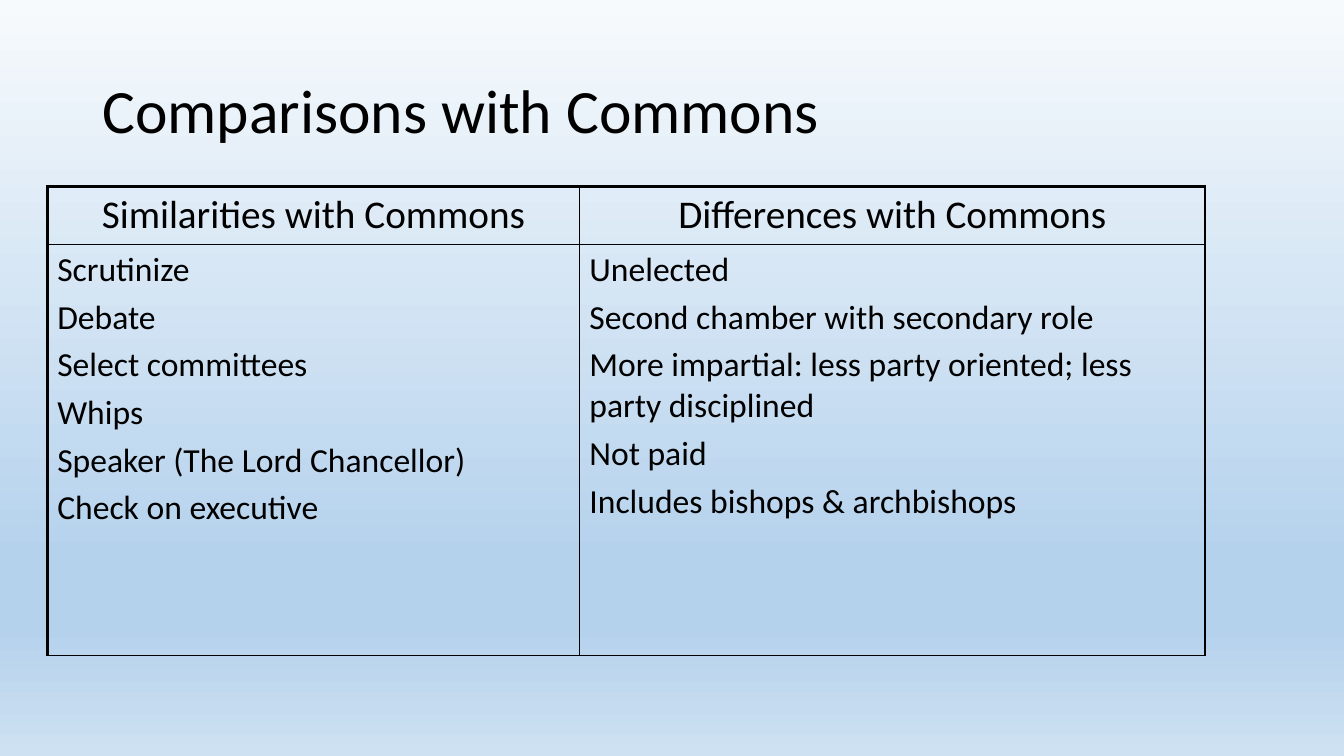
from dataclasses import dataclass

import pptx
import pptx.dml.color
import pptx.enum.text
import pptx.oxml
import pptx.oxml.ns
import pptx.slide
import pptx.table
import pptx.text.text
import pptx.util
from lxml import etree
from pptx.util import Cm

FONT = "Calibri"
INK = "000000"
THICK, THIN = 2.25, 1
ALIGN = pptx.enum.text.PP_ALIGN
STOPS = [(0, "F7FAFD"), (74, "B5D2EC"), (83, "B5D2EC"), (100, "CEE1F2")]


@dataclass
class Column:
    head: str
    width: float
    points: list[str]


COLUMNS = [
    Column("Similarities with Commons", 13.41, [
        "Scrutinize",
        "Debate",
        "Select committees",
        "Whips",
        "Speaker (The Lord Chancellor)",
        "Check on executive",
    ]),
    Column("Differences with Commons", 15.77, [
        "Unelected",
        "Second chamber with secondary role",
        "More impartial: less party oriented; less party disciplined",
        "Not paid",
        "Includes bishops & archbishops",
    ]),
]
HEIGHTS = [1.46, 10.36]


def color(code: str) -> pptx.dml.color.RGBColor:
    return pptx.dml.color.RGBColor.from_string(code)


def style(line: pptx.text.text._Paragraph, size: float, align: ALIGN) -> None:
    line.alignment = align
    for run in line.runs:
        run.font.name = FONT
        run.font.size = pptx.util.Pt(size)
        run.font.color.rgb = color(INK)


def paint(slide: pptx.slide.Slide) -> None:
    fill = slide.background.fill
    fill.gradient()
    fill.gradient_angle = 270
    stops = slide.element.find(".//" + pptx.oxml.ns.qn("a:gsLst"))
    for stop in list(stops):
        stops.remove(stop)
    for place, code in STOPS:
        stop = etree.SubElement(stops, pptx.oxml.ns.qn("a:gs"), pos=str(place * 1000))
        etree.SubElement(stop, pptx.oxml.ns.qn("a:srgbClr"), val=code)


def border(cell: pptx.table._Cell, side: str, width: float) -> None:
    props = cell._tc.get_or_add_tcPr()
    props.append(pptx.oxml.parse_xml(
        f'<a:ln{side} {pptx.oxml.ns.nsdecls("a")} w="{pptx.util.Pt(width)}">'
        f'<a:solidFill><a:srgbClr val="{INK}"/></a:solidFill></a:ln{side}>'
    ))


def write(cell: pptx.table._Cell, lines: list[str], size: float, align: ALIGN) -> None:
    cell.text_frame.text = "\n".join(lines)
    for index, line in enumerate(cell.text_frame.paragraphs):
        style(line, size, align)
        if index:
            line.space_before = pptx.util.Pt(size * 0.2)


def main() -> None:
    deck = pptx.Presentation()
    deck.slide_width, deck.slide_height = Cm(33.87), Cm(19.05)
    slide = deck.slides.add_slide(deck.slide_layouts[5])
    paint(slide)

    # Title
    title = slide.shapes.title
    title.left, title.top = Cm(2.33), Cm(1.01)
    title.width, title.height = Cm(29.21), Cm(3.68)
    frame = title.text_frame
    frame.text = "Comparisons with Commons"
    frame.auto_size = pptx.enum.text.MSO_AUTO_SIZE.NONE
    frame.vertical_anchor = pptx.enum.text.MSO_ANCHOR.MIDDLE
    frame.paragraphs[0].line_spacing = 0.9
    style(frame.paragraphs[0], 44, ALIGN.LEFT)

    # Table grid
    table = slide.shapes.add_table(
        len(HEIGHTS), len(COLUMNS), Cm(1.19), Cm(4.7),
        Cm(sum(column.width for column in COLUMNS)), Cm(sum(HEIGHTS)),
    ).table
    table.first_row = table.horz_banding = False
    for row, height in zip(table.rows, HEIGHTS):
        row.height = Cm(height)

    # Table text and borders
    last = len(COLUMNS) - 1
    for x, column in enumerate(COLUMNS):
        table.columns[x].width = Cm(column.width)
        write(table.cell(0, x), [column.head], 28, ALIGN.CENTER)
        write(table.cell(1, x), column.points, 24, ALIGN.LEFT)
        for y in range(len(HEIGHTS)):
            cell = table.cell(y, x)
            border(cell, "L", THICK if x == 0 else THIN)
            border(cell, "R", THICK if x == last else THIN)
            border(cell, "T", THICK if y == 0 else THIN)
            border(cell, "B", THIN)
            cell.fill.background()

    deck.save("out.pptx")


if __name__ == "__main__":
    main()
